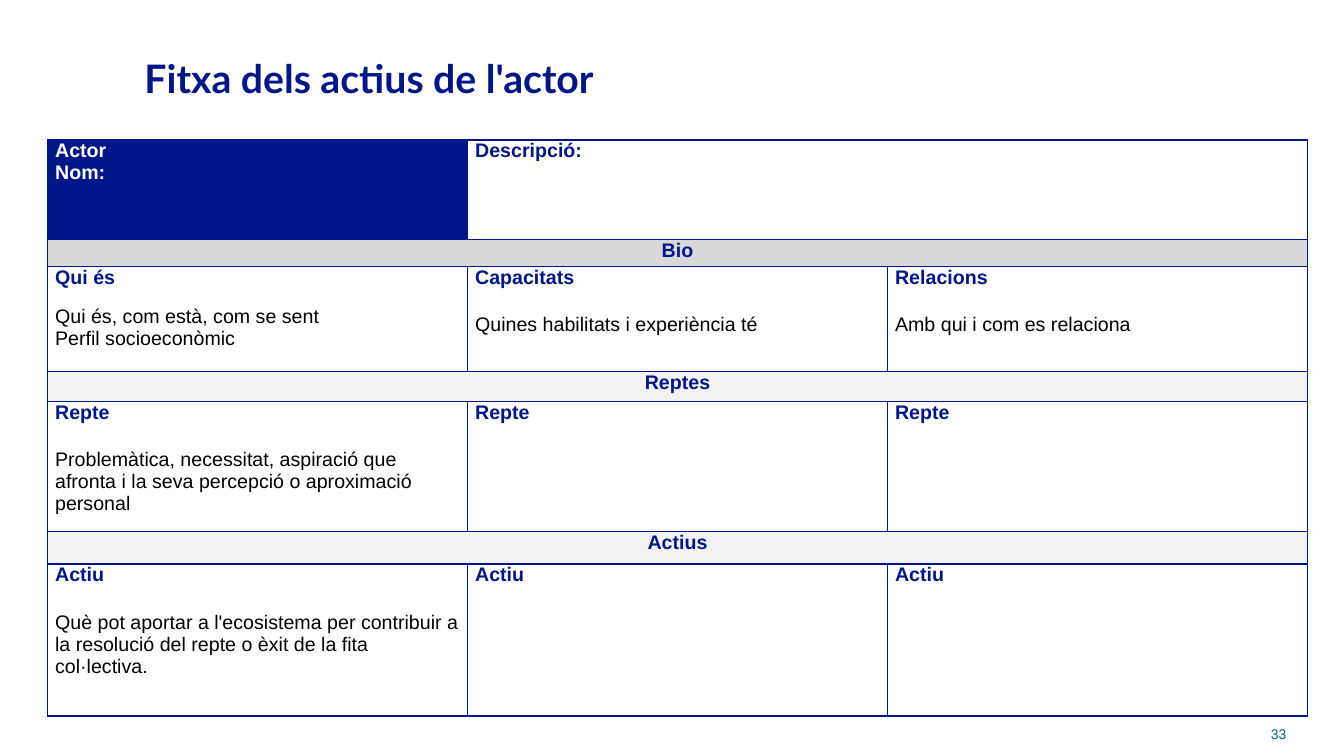
"""Build the actor assets sheet: a title, a three-column table and a page number."""
from dataclasses import dataclass

from lxml.etree import SubElement
from pptx import Presentation
from pptx.dml.color import RGBColor
from pptx.enum.text import MSO_ANCHOR as Anchor, PP_ALIGN as Align
from pptx.oxml.ns import qn
from pptx.util import Pt

NAVY, TEAL, BLACK, WHITE = "001689", "00676C", "000000", "FFFFFF"
SILVER, PALE = "D9D9D9", "F2F2F2"
COLUMN_WIDTH = 300
SIDE_MARGIN = 5.4


@dataclass(frozen=True)
class Entry:
    heading: str
    details: tuple[str, ...] = ()
    fill: str = WHITE
    ink: str = NAVY
    align: Align = Align.LEFT
    span: int = 1
    gap: float = 6


@dataclass(frozen=True)
class Band:
    height: float
    entries: tuple[Entry, ...]


def section(height: float, name: str, fill: str) -> Band:
    return Band(height, (Entry(name, fill=fill, align=Align.CENTER, span=3),))


BANDS = (
    Band(71, (Entry("Actor\vNom:", fill=NAVY, ink=WHITE), Entry("Descripció:", span=2))),
    section(19.5, "Bio", SILVER),
    Band(75, (
        Entry("Qui és", ("Qui és, com està, com se sent", "Perfil socioeconòmic"), gap=0),
        Entry("Capacitats", ("Quines habilitats i experiència té",)),
        Entry("Relacions", ("Amb qui i com es relaciona",)),
    )),
    section(21.5, "Reptes", PALE),
    Band(93, (
        Entry("Repte", ("Problemàtica, necessitat, aspiració que afronta i la seva "
                        "percepció o aproximació personal",)),
        Entry("Repte"),
        Entry("Repte"),
    )),
    section(23, "Actius", PALE),
    Band(108.5, (
        Entry("Actiu", ("Què pot aportar a l'ecosistema per contribuir a la resolució "
                        "del repte o èxit de la fita col·lectiva.",)),
        Entry("Actiu"),
        Entry("Actiu"),
    )),
)


def color(value: str) -> RGBColor:
    return RGBColor.from_string(value)


def style(paragraph, face: str, size: float, ink: str, bold: bool, align: Align) -> None:
    paragraph.alignment = align
    font = paragraph.font
    font.name, font.size, font.bold = face, Pt(size), bold
    font.color.rgb = color(ink)


def place(shape, left: float, top: float, width: float, height: float) -> None:
    shape.left, shape.top = Pt(left), Pt(top)
    shape.width, shape.height = Pt(width), Pt(height)
    shape.text_frame.word_wrap = True
    shape.text_frame.vertical_anchor = Anchor.MIDDLE


def prepare(cell, fill: str) -> None:
    cell.margin_left = cell.margin_right = Pt(SIDE_MARGIN)
    cell.margin_top = cell.margin_bottom = Pt(0)
    properties = cell._tc.get_or_add_tcPr()
    for side in ("a:lnL", "a:lnR", "a:lnT", "a:lnB"):
        border = SubElement(properties, qn(side), w=str(Pt(1)))
        SubElement(SubElement(border, qn("a:solidFill")), qn("a:srgbClr"), val=NAVY)
    cell.fill.solid()
    cell.fill.fore_color.rgb = color(fill)


def write(cell, entry: Entry) -> None:
    heading = cell.text_frame.paragraphs[0]
    heading.text = entry.heading
    heading.space_after = Pt(12)
    style(heading, "Arial", 14, entry.ink, True, entry.align)
    for detail in entry.details:
        line = cell.text_frame.add_paragraph()
        line.text = detail
        line.space_before = Pt(entry.gap)
        style(line, "Arial", 14, BLACK, False, entry.align)


def draw_sheet(slide) -> None:
    total = sum(band.height for band in BANDS)
    sheet = slide.shapes.add_table(
        len(BANDS), 3, Pt(34), Pt(100), Pt(3 * COLUMN_WIDTH), Pt(total)).table
    sheet.first_row = sheet.horz_banding = False
    for column in sheet.columns:
        column.width = Pt(COLUMN_WIDTH)
    for row, band in enumerate(BANDS):
        sheet.rows[row].height = Pt(band.height)
        start = 0
        for entry in band.entries:
            end = start + entry.span
            for column in range(start, end):
                prepare(sheet.cell(row, column), entry.fill)
            if entry.span > 1:
                sheet.cell(row, start).merge(sheet.cell(row, end - 1))
            write(sheet.cell(row, start), entry)
            start = end


def main() -> None:
    deck = Presentation()
    deck.slide_width, deck.slide_height = Pt(960), Pt(540)
    slide = deck.slides.add_slide(deck.slide_layouts[5])

    title = slide.shapes.title
    title.text = "Fitxa dels actius de l'actor"
    place(title, 96, 33, 818, 45)
    style(title.text_frame.paragraphs[0], "Lato", 28, NAVY, True, Align.LEFT)

    draw_sheet(slide)

    page_number = slide.shapes.add_textbox(Pt(0), Pt(0), Pt(0), Pt(0))
    page_number.text_frame.text = "33"
    place(page_number, 865.5, 514, 60.5, 21)
    style(page_number.text_frame.paragraphs[0], "Arial", 10, TEAL, False, Align.RIGHT)

    deck.save("out.pptx")


if __name__ == "__main__":
    main()
